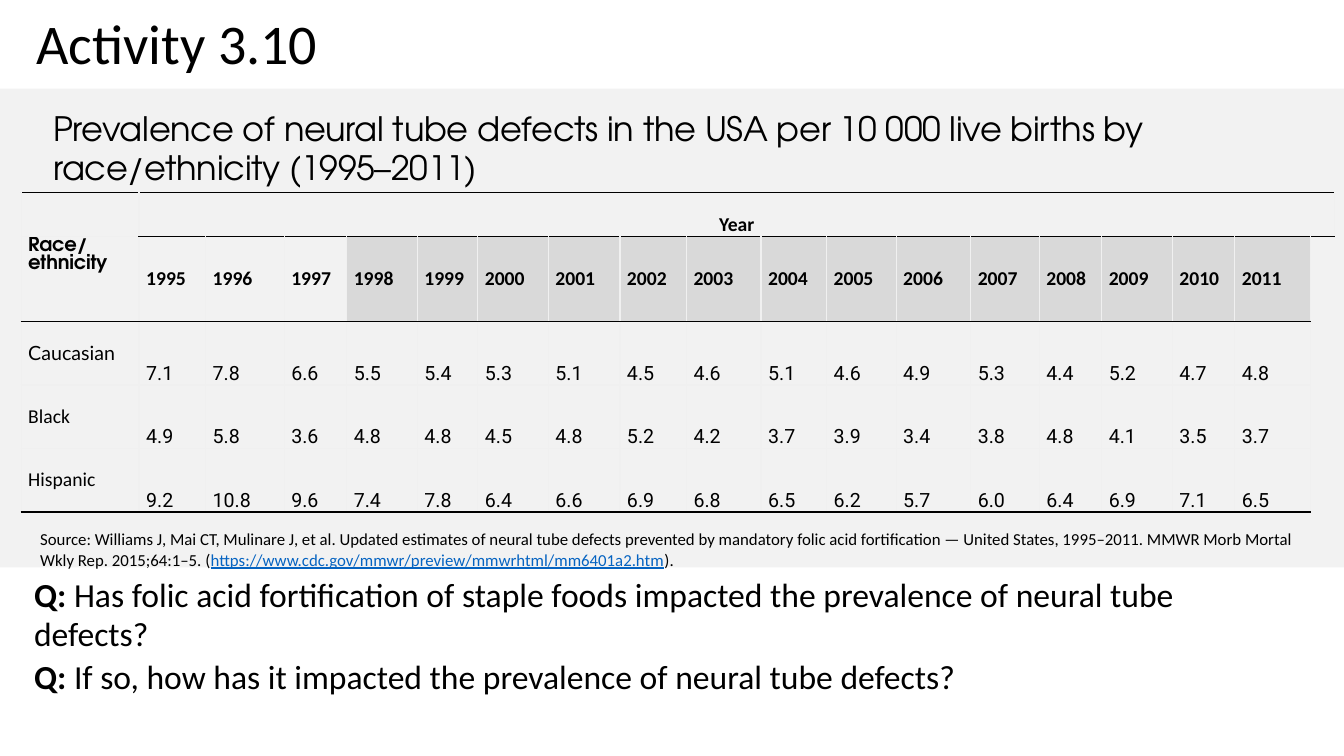
from lxml.etree import SubElement as Sub
from pptx import Presentation
from pptx.dml.color import RGBColor
from pptx.enum.shapes import MSO_SHAPE as Shape
from pptx.enum.text import MSO_ANCHOR as Anchor, PP_ALIGN as Align
from pptx.oxml.ns import qn
from pptx.util import Inches, Pt

BLACK, BAND, RULE, SHADE, LINK = "000000", "F2F2F2", "F0F0F0", "D9D9D9", "0563C1"
GEOM = "TeX Gyre Adventor"

YEARS = [str(year) for year in range(1995, 2012)]
RATES = {
    "Caucasian": "7.1 7.8 6.6 5.5 5.4 5.3 5.1 4.5 4.6 5.1 4.6 4.9 5.3 4.4 5.2 4.7 4.8",
    "Black": "4.9 5.8 3.6 4.8 4.8 4.5 4.8 5.2 4.2 3.7 3.9 3.4 3.8 4.8 4.1 3.5 3.7",
    "Hispanic": "9.2 10.8 9.6 7.4 7.8 6.4 6.6 6.9 6.8 6.5 6.2 5.7 6.0 6.4 6.9 7.1 6.5",
}
WIDTHS = [1.17, 0.66, 0.78, 0.62, 0.7, 0.6, 0.7, 0.71, 0.66, 0.74,
          0.65, 0.69, 0.74, 0.68, 0.62, 0.7, 0.62, 0.75, 0.2]
HEIGHTS = [0.44, 0.84, 0.63, 0.63, 0.63]
SHADED = 4  # first column of the years with fortification


def color(code):
    return RGBColor.from_string(code)


class Deck:
    def __init__(self):
        self.prs = Presentation()
        self.prs.slide_width, self.prs.slide_height = Inches(13.33), Inches(7.5)
        self.slide = self.prs.slides.add_slide(self.prs.slide_layouts[6])

    def band(self, *place):
        box = self.slide.shapes.add_shape(Shape.RECTANGLE, *map(Inches, place))
        box.shadow.inherit = False
        box.fill.solid()
        box.fill.fore_color.rgb = color(BAND)
        box.line.fill.background()

    def fill_para(self, para, runs, size, font="Calibri", bold=False, track=0):
        para.font.size, para.font.name = Pt(size), font
        para.font.color.rgb = color(BLACK)
        para.font.bold = bold
        for words, look in runs:
            run = para.add_run()
            run.text = words
            if look == "bold":
                run.font.bold = True
            if look == "link":
                run.font.color.rgb = color(LINK)
                run.font.underline = True
            if track:
                run._r.get_or_add_rPr().set("spc", str(track))

    def text(self, place, paras, size, font="Calibri", lead=1.0, gap=0,
             right=0.1, anchor=Anchor.TOP, track=0):
        frame = self.slide.shapes.add_textbox(*map(Inches, place)).text_frame
        frame.word_wrap = True
        frame.vertical_anchor = anchor
        frame.margin_right = Inches(right)
        for i, runs in enumerate(paras):
            para = frame.add_paragraph() if i else frame.paragraphs[0]
            para.line_spacing = lead
            if i:
                para.space_before = Pt(gap)
            self.fill_para(para, runs, size, font, track=track)

    def cell(self, cell, words, anchor, font="Calibri", bold=False, track=0):
        cell.margin_left = cell.margin_right = Inches(0.07)
        cell.margin_top = cell.margin_bottom = 0
        cell.vertical_anchor = anchor
        self.fill_para(cell.text_frame.paragraphs[0], [(words, "")], 14, font, bold, track)

    def edges(self, cell, **sides):
        props = cell._tc.get_or_add_tcPr()
        for side in "LRTB":
            line = Sub(props, qn("a:ln" + side), w=str(Pt(1)))
            if sides.get(side):
                fill = Sub(line, qn("a:solidFill"))
                Sub(fill, qn("a:srgbClr"), val=sides[side])
            else:
                Sub(line, qn("a:noFill"))

    def table(self, left, top):
        place = map(Inches, (left, top, sum(WIDTHS), sum(HEIGHTS)))
        grid = self.slide.shapes.add_table(len(HEIGHTS), len(WIDTHS), *place).table
        grid.first_row = grid.horz_banding = False
        for col, width in zip(grid.columns, WIDTHS):
            col.width = Inches(width)
        for row, height in zip(grid.rows, HEIGHTS):
            row.height = Inches(height)

        # Rules and fills
        last = len(WIDTHS) - 1
        ruled = {0: range(1, last + 1), 1: range(last), 4: range(last)}
        for r in range(len(HEIGHTS)):
            for c in range(last + 1):
                cell = grid.cell(r, c)
                over = BLACK if r == 0 or c in ruled.get(r - 1, ()) else RULE
                under = BLACK if c in ruled.get(r, ()) else RULE
                if c == last and r:
                    self.edges(cell, L=RULE, T=BLACK if r == 1 else None)
                else:
                    self.edges(cell, L=RULE, R=RULE, T=over, B=under)
                if r == 1 and SHADED <= c < last:
                    cell.fill.solid()
                    cell.fill.fore_color.rgb = color(SHADE)
                else:
                    cell.fill.background()

        # Headings
        grid.cell(0, 1).merge(grid.cell(0, last))
        self.cell(grid.cell(0, 1), "Year", Anchor.BOTTOM, bold=True)
        grid.cell(0, 1).text_frame.paragraphs[0].alignment = Align.CENTER
        self.cell(grid.cell(1, 0), "Race/ ethnicity", Anchor.TOP, GEOM, True, -20)
        for c, year in enumerate(YEARS, 1):
            self.cell(grid.cell(1, c), year, Anchor.MIDDLE, bold=True)

        # Rates by group
        for r, (group, rates) in enumerate(RATES.items(), 2):
            font = "Lato" if group == "Caucasian" else "Calibri"
            self.cell(grid.cell(r, 0), group, Anchor.MIDDLE, font)
            for c, rate in enumerate(rates.split(), 1):
                self.cell(grid.cell(r, c), rate, Anchor.BOTTOM, "Roboto")


def main():
    deck = Deck()

    # Title and band
    deck.band(0, 0.88, 13.33, 4.75)
    deck.text((0.26, -0.05, 11.5, 1.02), [[("Activity 3.10", "")]], 40,
              lead=0.9, anchor=Anchor.MIDDLE)
    deck.text((0.43, 1.04, 12.29, 0.88),
              [[("Prevalence of neural tube defects in the USA per 10 000 live births "
                 "by race/ethnicity (1995–2011)", "")]], 24, GEOM, lead=0.97, track=-20)

    # Source line
    deck.text((0.3, 5.2, 12.9, 0.5), [[
        ("Source: Williams J, Mai CT, Mulinare J, et al. Updated estimates of neural tube "
         "defects prevented by mandatory folic acid fortification — United States, "
         "1995–2011. MMWR Morb Mortal Wkly Rep. 2015;64:1–5. (", ""),
        ("https://www.cdc.gov/mmwr/preview/mmwrhtml/mm6401a2.htm", "link"),
        (").", "")]], 12)

    # Questions
    asks = ["Has folic acid fortification of staple foods impacted the prevalence of "
            "neural tube defects?",
            "If so, how has it impacted the prevalence of neural tube defects?"]
    deck.text((0.24, 5.67, 12.96, 1.34), [[("Q: ", "bold"), (ask, "")] for ask in asks],
              24, lead=0.96, gap=3.5, right=0.6)

    # Prevalence table
    deck.table(0.21, 1.91)
    deck.prs.save("out.pptx")


if __name__ == "__main__":
    main()
